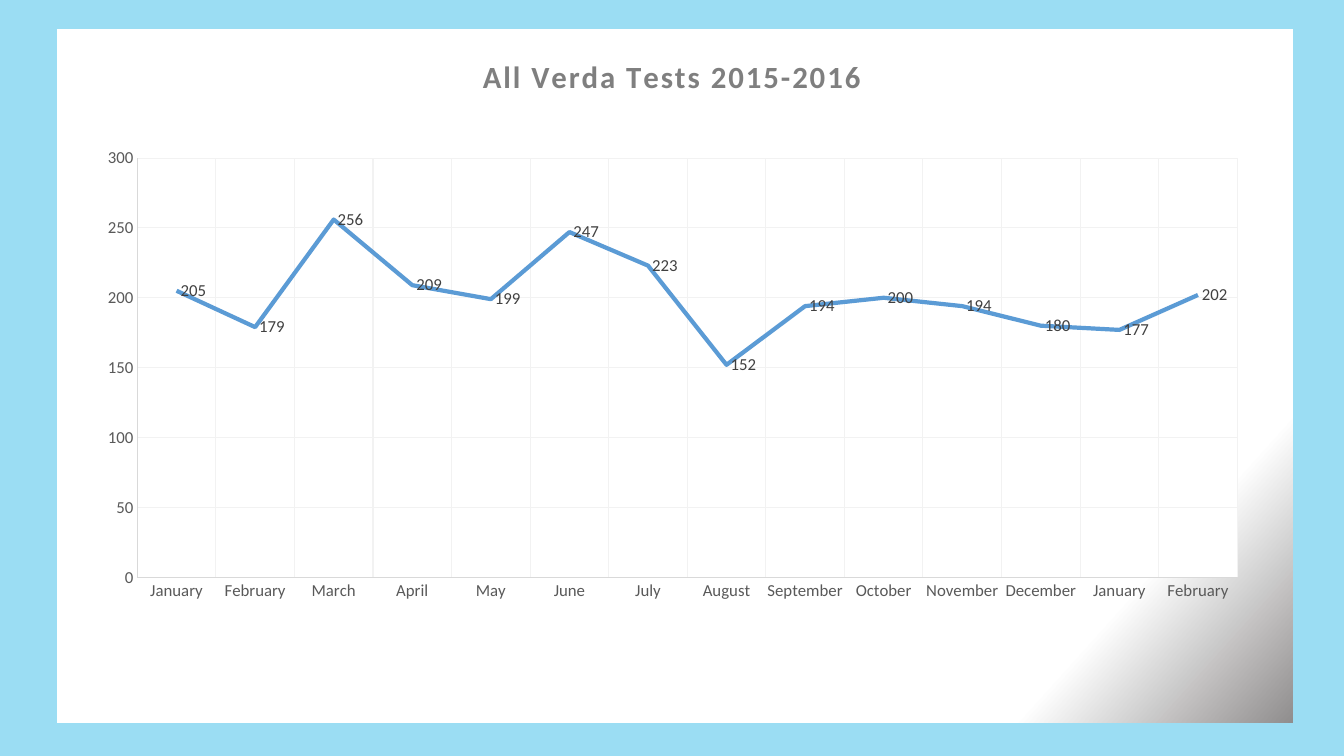
from lxml import etree
from pptx import Presentation
from pptx.chart.data import CategoryChartData
from pptx.dml.color import RGBColor
from pptx.enum.chart import XL_CHART_TYPE, XL_LABEL_POSITION, XL_MARKER_STYLE, XL_TICK_MARK
from pptx.oxml import parse_xml
from pptx.oxml.ns import nsdecls, qn
from pptx.util import Emu, Pt

LINE = XL_CHART_TYPE.LINE
RIGHT = XL_LABEL_POSITION.RIGHT
NO_MARKER = XL_MARKER_STYLE.NONE
NO_TICK = XL_TICK_MARK.NONE

EMU_PER_PX = 914400 / 100.8
FONT = "Calibri"
COLORS = {
    "sky": "9BDDF3",
    "white": "FFFFFF",
    "shade": "908E8E",
    "title": "7F7F7F",
    "axis_text": "595959",
    "axis_line": "D9D9D9",
    "grid": "F2F2F2",
    "label": "404040",
    "tests": "5B9BD5",
}
MONTHS = ["January", "February", "March", "April", "May", "June", "July",
          "August", "September", "October", "November", "December",
          "January", "February"]
TESTS = [205, 179, 256, 209, 199, 247, 223, 152, 194, 200, 194, 180, 177, 202]


def px(length):
    return Emu(round(length * EMU_PER_PX))


def color(name):
    return RGBColor.from_string(COLORS[name])


def manual_layout(**settings):
    """Chart layout element; settings are in schema order."""
    layout = parse_xml(f"<c:layout {nsdecls('c')}><c:manualLayout/></c:layout>")
    for tag, value in settings.items():
        etree.SubElement(layout[0], qn(f"c:{tag}")).set("val", str(value))
    return layout


def drop_layout(parent):
    for layout in parent.findall(qn("c:layout")):
        parent.remove(layout)


def shape_fill(fill):
    return parse_xml(f"<c:spPr {nsdecls('c', 'a')}>{fill}<a:ln><a:noFill/></a:ln></c:spPr>")


class ChartSlide:
    def __init__(self, presentation):
        self.slide = presentation.slides.add_slide(presentation.slide_layouts[6])
        fill = self.slide.background.fill
        fill.solid()
        fill.fore_color.rgb = color("sky")

    def style_font(self, font, size, name, bold=False):
        font.name = FONT
        font.size = Pt(size)
        font.bold = bold
        font.color.rgb = color(name)

    def style_line(self, line, name, width):
        line.color.rgb = color(name)
        line.width = Pt(width)

    def line_chart(self, left, top, width, height, months, tests):
        data = CategoryChartData()
        data.categories = months
        data.add_series("Series 1", tests)
        chart = self.slide.shapes.add_chart(
            LINE, px(left), px(top), px(width), px(height), data).chart
        chart.has_legend = False
        self.style_font(chart.font, 12, "axis_text")
        for axis in (chart.category_axis, chart.value_axis):
            self.axis(axis)
        chart.value_axis.minimum_scale = 0
        chart.value_axis.maximum_scale = 300
        chart.value_axis.major_unit = 50
        self.series(chart.plots[0])
        return chart

    def axis(self, axis):
        axis.major_tick_mark = axis.minor_tick_mark = NO_TICK
        axis.has_major_gridlines = True
        self.style_line(axis.major_gridlines.format.line, "grid", 0.75)
        self.style_line(axis.format.line, "axis_line", 0.25)
        self.style_font(axis.tick_labels.font, 12, "axis_text")

    def series(self, plot):
        plot.vary_by_categories = False
        tests = plot.series[0]
        tests.smooth = False
        tests.marker.style = NO_MARKER
        self.style_line(tests.format.line, "tests", 3)
        labels = tests.data_labels
        labels.show_value = True
        labels.position = RIGHT
        self.style_font(labels.font, 12, "label")

    def chart_title(self, chart, text, x, y):
        chart.has_title = True
        title = chart.chart_title
        title.include_in_layout = False
        heading = title.text_frame.paragraphs[0]
        heading.text = text
        self.style_font(heading.font, 22, "title", bold=True)
        heading.runs[0].font.bold = True
        for properties in title.element.iter(qn("a:defRPr"), qn("a:rPr")):
            properties.set("spc", "150")
        drop_layout(title.element)
        title.element.find(qn("c:tx")).addnext(
            manual_layout(xMode="edge", yMode="edge", x=x, y=y))

    def plot_area(self, chart, x, y, w, h):
        area = chart.element.find(f".//{qn('c:plotArea')}")
        drop_layout(area)
        area.insert(0, manual_layout(layoutTarget="inner", xMode="edge",
                                     yMode="edge", x=x, y=y, w=w, h=h))
        area.append(shape_fill(
            f'<a:solidFill><a:srgbClr val="{COLORS["white"]}"/></a:solidFill>'))

    def chart_gradient(self, chart, stops, angle):
        marks = "".join(
            f'<a:gs pos="{percent * 1000}"><a:srgbClr val="{COLORS[name]}"/></a:gs>'
            for percent, name in stops)
        chart.element.find(qn("c:chart")).addnext(shape_fill(
            f'<a:gradFill><a:gsLst>{marks}</a:gsLst>'
            f'<a:lin ang="{angle * 60000}" scaled="0"/></a:gradFill>'))


def main():
    presentation = Presentation()
    presentation.slide_width, presentation.slide_height = px(1344), px(756)
    page = ChartSlide(presentation)
    chart = page.line_chart(57, 29, 1236, 694, MONTHS, TESTS)
    page.chart_title(chart, "All Verda Tests 2015-2016", 0.34, 0.03)
    page.plot_area(chart, 0.065, 0.186, 0.89, 0.604)
    page.chart_gradient(chart, [(0, "white"), (85, "white"), (100, "shade")], 42)
    presentation.save("out.pptx")


if __name__ == "__main__":
    main()
